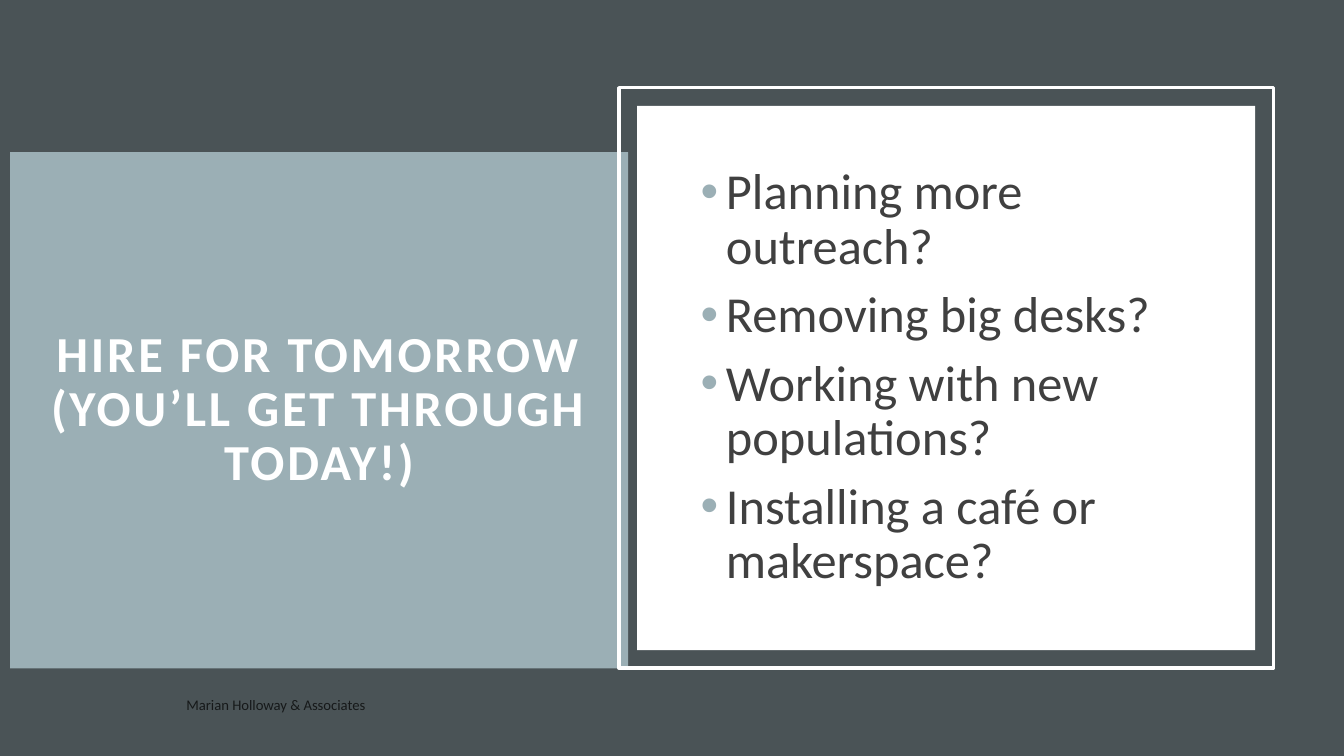
import dataclasses

import lxml.etree
import pptx
import pptx.dml.color
import pptx.enum.shapes
import pptx.enum.text
import pptx.oxml.ns
import pptx.util


@dataclasses.dataclass(frozen=True)
class Theme:
    font: str = "Calibri"
    background: str = "4A5356"
    accent: str = "9BAFB5"
    light: str = "FFFFFF"
    body: str = "404040"
    footer: str = "000000"
    footer_opacity: int = 70
    main_size: float = 36
    footer_size: float = 10.5
    frame_width: float = 2.5


def rgb(color):
    return pptx.dml.color.RGBColor.from_string(color)


def add_child(parent, tag, **attributes):
    child = lxml.etree.SubElement(parent, pptx.oxml.ns.qn(tag))
    for name, value in attributes.items():
        child.set(name, str(value))
    return child


def write_text(paragraph, text, *, font, size, color, bold=False, spacing=0, opacity=100,
               align=pptx.enum.text.PP_ALIGN.LEFT, line_spacing=1.0, space_before=0):
    paragraph.text = text
    paragraph.alignment = align
    paragraph.line_spacing = line_spacing
    paragraph.space_before = pptx.util.Pt(space_before)
    for run in paragraph.runs:
        run.font.name = font
        run.font.size = pptx.util.Pt(size)
        run.font.bold = bold
        run.font.color.rgb = rgb(color)
        properties = run.font._element
        if spacing:
            properties.set("spc", str(spacing * 100))
        if opacity < 100:
            add_child(properties.find(".//" + pptx.oxml.ns.qn("a:srgbClr")), "a:alpha", val=opacity * 1000)


class SlideBuilder:
    def __init__(self, presentation, theme):
        self.theme = theme
        self.slide = presentation.slides.add_slide(presentation.slide_layouts[1])
        fill = self.slide.background.fill
        fill.solid()
        fill.fore_color.rgb = rgb(theme.background)

    def place(self, shape, left, top, width, height):
        shape.left, shape.top = pptx.util.Inches(left), pptx.util.Inches(top)
        shape.width, shape.height = pptx.util.Inches(width), pptx.util.Inches(height)
        self.slide.shapes._spTree.append(shape._element)

    def prepare_frame(self, shape, inset_x=0.1, inset_y=0.05):
        frame = shape.text_frame
        frame.word_wrap = True
        frame.auto_size = pptx.enum.text.MSO_AUTO_SIZE.NONE
        frame.vertical_anchor = pptx.enum.text.MSO_ANCHOR.MIDDLE
        frame.margin_left = frame.margin_right = pptx.util.Inches(inset_x)
        frame.margin_top = frame.margin_bottom = pptx.util.Inches(inset_y)
        return frame

    def title(self, text, *box):
        theme = self.theme
        shape = self.slide.shapes.title
        self.place(shape, *box)
        shape.fill.solid()
        shape.fill.fore_color.rgb = rgb(theme.accent)
        frame = self.prepare_frame(shape, 0.2, 0.2)
        write_text(frame.paragraphs[0], text, font=theme.font, size=theme.main_size, color=theme.light,
                   bold=True, spacing=2, align=pptx.enum.text.PP_ALIGN.CENTER, line_spacing=0.9)

    def rectangle(self, *box, fill=None, line=None):
        shape = self.slide.shapes.add_shape(
            pptx.enum.shapes.MSO_SHAPE.RECTANGLE, *map(pptx.util.Inches, box))
        shape.shadow.inherit = False
        if fill:
            shape.fill.solid()
            shape.fill.fore_color.rgb = rgb(fill)
        else:
            shape.fill.background()
        if line:
            shape.line.color.rgb = rgb(line)
            shape.line.width = pptx.util.Pt(self.theme.frame_width)
        else:
            shape.line.fill.background()

    def bullets(self, items, *box):
        theme = self.theme
        shape = self.slide.placeholders[1]
        self.place(shape, *box)
        frame = self.prepare_frame(shape)
        indent = pptx.util.Inches(0.25)
        for index, item in enumerate(items):
            paragraph = frame.add_paragraph() if index else frame.paragraphs[0]
            write_text(paragraph, item, font=theme.font, size=theme.main_size, color=theme.body,
                       line_spacing=0.9, space_before=10)
            properties = paragraph._p.get_or_add_pPr()
            properties.set("marL", str(indent))
            properties.set("indent", str(-indent))
            add_child(add_child(properties, "a:buClr"), "a:srgbClr", val=theme.accent)
            add_child(properties, "a:buFont", typeface="Arial")
            add_child(properties, "a:buChar", char="•")

    def footer(self, text, *box):
        theme = self.theme
        shape = self.slide.shapes.add_textbox(*map(pptx.util.Inches, box))
        frame = self.prepare_frame(shape)
        write_text(frame.paragraphs[0], text, font=theme.font, size=theme.footer_size,
                   color=theme.footer, opacity=theme.footer_opacity)


def main():
    presentation = pptx.Presentation()
    presentation.slide_width = pptx.util.Inches(13.33)
    presentation.slide_height = pptx.util.Inches(7.5)
    theme = Theme()
    builder = SlideBuilder(presentation, theme)
    builder.title("HIRE FOR TOMORROW\v(YOU’LL GET THROUGH TODAY!)", 0.1, 1.51, 6.13, 5.12)
    builder.rectangle(6.14, 0.87, 6.49, 5.76, line=theme.light)
    builder.rectangle(6.32, 1.05, 6.13, 5.4, fill=theme.light)
    builder.bullets([
        "Planning more outreach?",
        "Removing big desks?",
        "Working with new populations?",
        "Installing a café or makerspace?",
    ], 6.85, 1.58, 5.09, 4.34)
    builder.footer("Marian Holloway & Associates", 1.75, 6.82, 6.45, 0.35)
    presentation.save("out.pptx")


if __name__ == "__main__":
    main()
